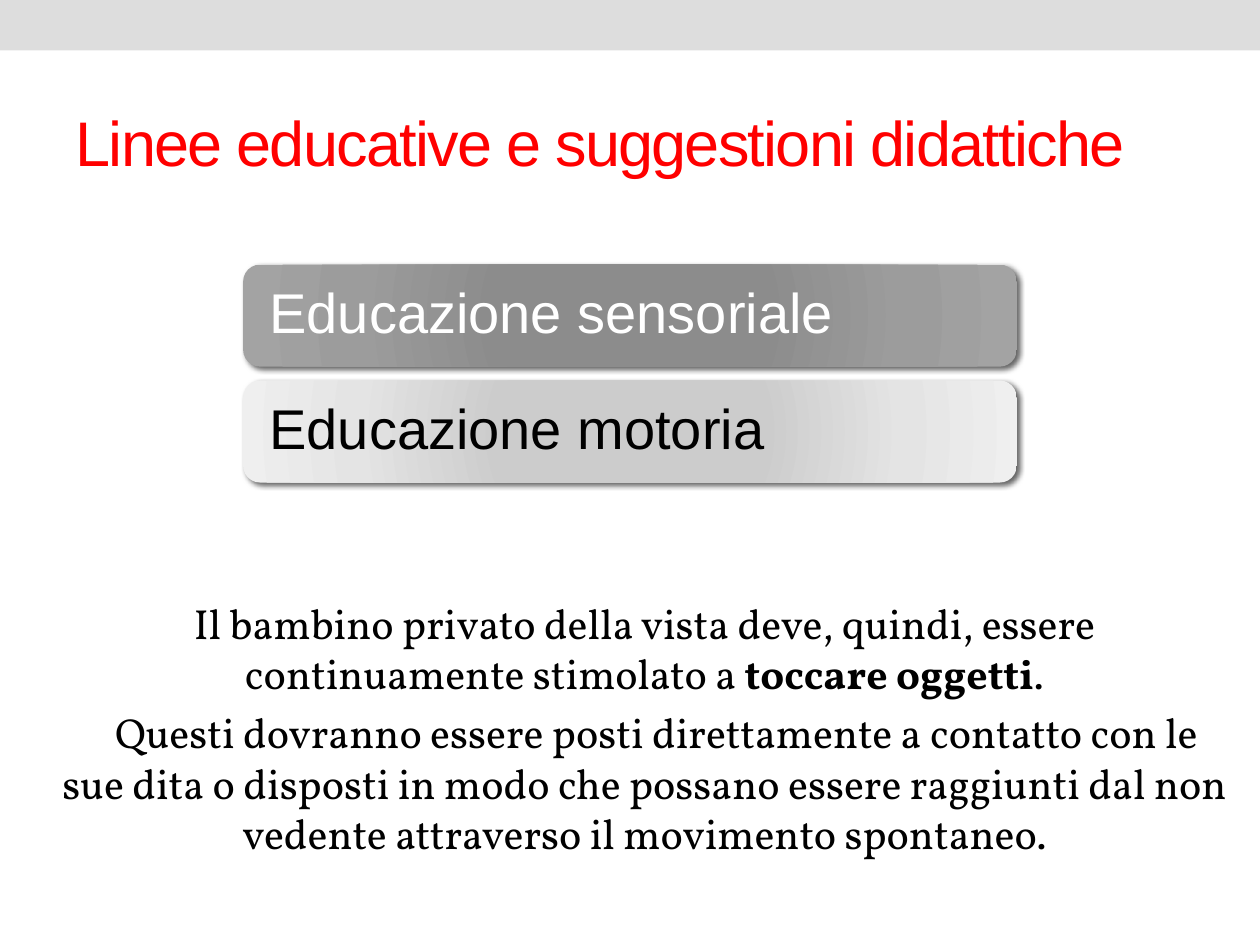
from lxml.etree import SubElement
from pptx import Presentation
from pptx.dml.color import RGBColor
from pptx.enum.shapes import MSO_SHAPE
from pptx.enum.text import MSO_ANCHOR, MSO_AUTO_SIZE, PP_ALIGN
from pptx.oxml.ns import qn
from pptx.util import Inches, Pt


def color(value):
    return RGBColor.from_string(value)


def add_block(shape_kind, left, top, width, height):
    block = slide.shapes.add_shape(
        shape_kind, Inches(left), Inches(top), Inches(width), Inches(height))
    block.shadow.inherit = False
    block.line.fill.background()
    return block


prs = Presentation()
prs.slide_width = Inches(10)
prs.slide_height = Inches(7.5)
slide = prs.slides.add_slide(prs.slide_layouts[5])

band = add_block(MSO_SHAPE.RECTANGLE, 0, 0, 10, 0.4)
band.fill.solid()
band.fill.fore_color.rgb = color("DDDDDD")

title = slide.shapes.title
title.left, title.top = Inches(0.5), Inches(0.58)
title.width, title.height = Inches(9), Inches(1.08)
title.text_frame.text = "Linee educative e suggestioni didattiche"
title.text_frame.auto_size = MSO_AUTO_SIZE.NONE
title.text_frame.vertical_anchor = MSO_ANCHOR.MIDDLE
heading = title.text_frame.paragraphs[0]
heading.alignment = PP_ALIGN.LEFT
heading.font.name = "Arial"
heading.font.size = Pt(36)
heading.font.color.rgb = color("FF0000")
heading.runs[0].font._element.set("spc", "-100")

areas = [
    ("Educazione sensoriale", "FFFFFF", ("8C8C8C", "8C8C8C", "9C9C9C", "A3A3A3")),
    ("Educazione motoria", "000000", ("CCCCCC", "CCCCCC", "E4E4E4", "EFEFEF")),
]
for row, (label, ink, shades) in enumerate(areas):
    area = add_block(MSO_SHAPE.ROUNDED_RECTANGLE, 1.93, 2.1 + row * 0.92, 6.14, 0.81)

    area.fill.gradient()
    gradient = area._element.spPr.find(qn("a:gradFill"))
    for child in list(gradient):
        gradient.remove(child)
    stops = SubElement(gradient, qn("a:gsLst"))
    for position, shade in zip((0, 34, 70, 100), shades):
        stop = SubElement(stops, qn("a:gs"), pos=str(position * 1000))
        SubElement(stop, qn("a:srgbClr"), val=shade)
    circle = SubElement(gradient, qn("a:path"), path="circle")
    SubElement(circle, qn("a:fillToRect"), {side: "100000" for side in "ltrb"})

    effects = area._element.spPr.find(qn("a:effectLst"))
    shadow = SubElement(effects, qn("a:outerShdw"), blurRad=str(Pt(3)),
                        dist=str(Pt(2)), dir=str(45 * 60000), rotWithShape="0")
    shadow_color = SubElement(shadow, qn("a:srgbClr"), val="000000")
    SubElement(shadow_color, qn("a:alpha"), val="60000")

    frame = area.text_frame
    frame.text = label
    frame.word_wrap = True
    frame.vertical_anchor = MSO_ANCHOR.MIDDLE
    frame.margin_left = frame.margin_right = Inches(0.17)
    frame.margin_top = frame.margin_bottom = Inches(0.13)
    area_name = frame.paragraphs[0]
    area_name.alignment = PP_ALIGN.LEFT
    area_name.line_spacing = 0.9
    area_name.font.name = "Arial"
    area_name.font.size = Pt(32)
    area_name.font.color.rgb = color(ink)

advice = slide.shapes.add_textbox(
    Inches(0.35), Inches(4.69), Inches(9.53), Inches(2.2)).text_frame
advice.word_wrap = True
advice.auto_size = MSO_AUTO_SIZE.SHAPE_TO_FIT_TEXT
sentences = [
    (0, [("Il bambino privato della vista deve, quindi, essere continuamente stimolato a ", False),
         ("toccare oggetti", True), (".", False)]),
    (0.19, [("Questi dovranno essere posti direttamente a contatto con le sue dita o disposti "
             "in modo che possano essere raggiunti dal non vedente attraverso il movimento "
             "spontaneo.", False)]),
]
for number, (indent, parts) in enumerate(sentences):
    sentence = advice.add_paragraph() if number else advice.paragraphs[0]
    sentence.alignment = PP_ALIGN.CENTER
    sentence.space_before = Pt(5)
    sentence._p.get_or_add_pPr().set("indent", str(Inches(indent)))
    sentence.font.name = "Vollkorn"
    sentence.font.size = Pt(24)
    sentence.font.color.rgb = color("000000")
    for words, bold in parts:
        run = sentence.add_run()
        run.text = words
        run.font.bold = bold

prs.save("out.pptx")
